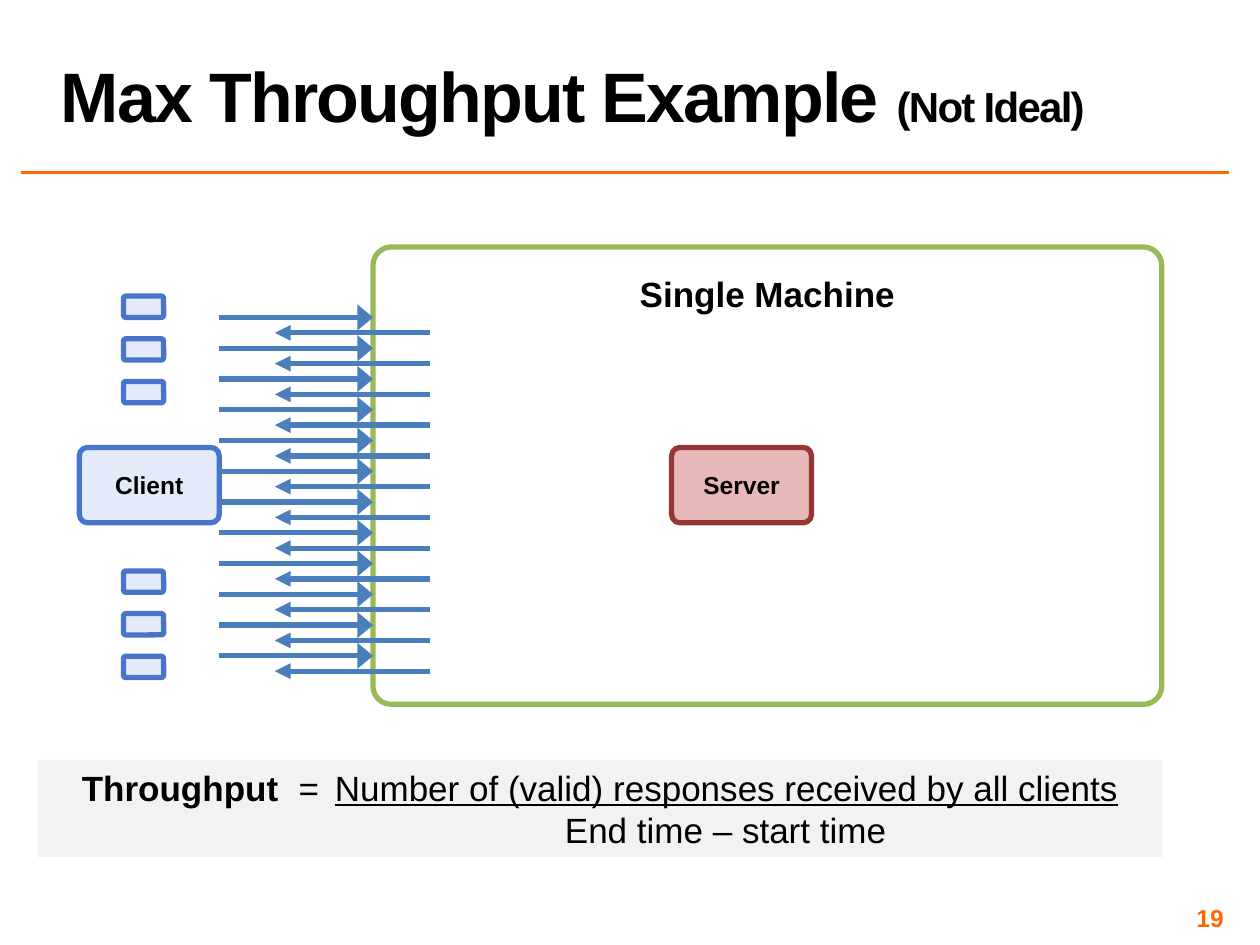
from dataclasses import dataclass
from typing import Any, Optional

import lxml.etree
import pptx
import pptx.dml.color
import pptx.enum.shapes
import pptx.enum.text
import pptx.oxml.ns
import pptx.util

Cm = pptx.util.Cm
Pt = pptx.util.Pt
RGBColor = pptx.dml.color.RGBColor
Align = pptx.enum.text.PP_ALIGN
Anchor = pptx.enum.text.MSO_ANCHOR
Preset = pptx.enum.shapes.MSO_SHAPE
qn = pptx.oxml.ns.qn

BLACK = RGBColor(0x00, 0x00, 0x00)
ORANGE = RGBColor(0xFF, 0x66, 0x00)
CLIENT_FILL = RGBColor(0xE3, 0xEA, 0xF9)
CLIENT_LINE = RGBColor(0x49, 0x74, 0xCB)
SERVER_FILL = RGBColor(0xE6, 0xB9, 0xB8)
SERVER_LINE = RGBColor(0x95, 0x37, 0x35)
MACHINE_LINE = RGBColor(0x98, 0xB9, 0x55)
ARROW_BLUE = RGBColor(0x4B, 0x7E, 0xBC)
FORMULA_FILL = RGBColor(0xF2, 0xF2, 0xF2)


@dataclass
class Box:
    left: float
    top: float
    width: float
    height: float
    fill: Optional[RGBColor] = None
    line: Optional[RGBColor] = None
    corner: Optional[float] = None
    text: str = ""
    size: int = 14


@dataclass
class ArrowStack:
    """Equally spaced horizontal arrows; end is the XML tag of the arrowhead."""
    left: float
    right: float
    top: float
    end: str
    head_width: str


ARROW_COUNT = 12
ARROW_STEP = 0.62
REQUESTS = ArrowStack(4.42, 7.52, 6.4, "a:tailEnd", "lg")
RESPONSES = ArrowStack(5.54, 8.66, 6.71, "a:headEnd", "med")

SMALL_CLIENT_TOPS = [start + 0.86 * row for start in (5.97, 11.51) for row in range(3)]
CLIENT_STYLE = {"fill": CLIENT_FILL, "line": CLIENT_LINE, "corner": 0.11}
CLIENT = Box(1.6, 9.02, 2.82, 1.52, text="Client", **CLIENT_STYLE)
SMALL_CLIENTS = [Box(2.49, top, 0.81, 0.43, **CLIENT_STYLE) for top in SMALL_CLIENT_TOPS]
MACHINE = Box(7.52, 4.98, 15.9, 9.22, line=MACHINE_LINE, corner=0.04,
              text="Single Machine", size=20)
SERVER = Box(13.54, 9.02, 2.82, 1.52, SERVER_FILL, SERVER_LINE, 0.11, "Server")
FORMULA = Box(0.76, 15.32, 22.68, 1.96, fill=FORMULA_FILL)


def apply(target: Any, values: dict) -> None:
    for name, value in values.items():
        setattr(target, name, value)


def add_span(para: Any, text: str, size: int, color: RGBColor = BLACK, **extra: Any) -> Any:
    span = para.add_run()
    span.text = text
    apply(span.font, {"name": "Arial", "size": Pt(size), **extra})
    span.font.color.rgb = color
    return span


def add_box(page: Any, box: Box) -> Any:
    preset = Preset.RECTANGLE if box.corner is None else Preset.ROUNDED_RECTANGLE
    shape = page.shapes.add_shape(preset, Cm(box.left), Cm(box.top),
                                  Cm(box.width), Cm(box.height))
    shape.shadow.inherit = False
    if box.corner is not None:
        shape.adjustments[0] = box.corner
    if box.fill is None:
        shape.fill.background()
    else:
        shape.fill.solid()
        shape.fill.fore_color.rgb = box.fill
    if box.line is None:
        shape.line.fill.background()
    else:
        shape.line.color.rgb = box.line
        shape.line.width = Pt(3)
    apply(shape.text_frame, {"word_wrap": True, "vertical_anchor": Anchor.MIDDLE})
    if box.text:
        para = shape.text_frame.paragraphs[0]
        para.alignment = Align.CENTER
        add_span(para, box.text, box.size, bold=True)
    return shape


def add_line(page: Any, left: float, right: float, top: float,
             color: RGBColor, width: float) -> Any:
    line = page.shapes.add_connector(pptx.enum.shapes.MSO_CONNECTOR.STRAIGHT,
                                     Cm(left), Cm(top), Cm(right), Cm(top))
    line.line.color.rgb = color
    line.line.width = Pt(width)
    lxml.etree.SubElement(line._element.spPr, qn("a:effectLst"))
    return line


def add_arrows(page: Any, stack: ArrowStack) -> None:
    for row in range(ARROW_COUNT):
        arrow = add_line(page, stack.left, stack.right, stack.top + row * ARROW_STEP,
                         ARROW_BLUE, 3)
        lxml.etree.SubElement(arrow.line._ln, qn(stack.end), type="triangle",
                              w=stack.head_width, len="med")


def add_title(page: Any) -> None:
    title = page.shapes.title
    apply(title, {"left": Cm(0.97), "top": Cm(0.05), "width": Cm(23.8), "height": Cm(2.82)})
    apply(title.text_frame, {"vertical_anchor": Anchor.BOTTOM, "word_wrap": True,
                             "auto_size": pptx.enum.text.MSO_AUTO_SIZE.NONE})
    para = title.text_frame.paragraphs[0]
    apply(para, {"alignment": Align.LEFT, "line_spacing": 0.8})
    for text, size in (("Max Throughput Example ", 40), ("(Not Ideal)", 24)):
        span = add_span(para, text, size, bold=True)
        span.font._element.set("spc", "-100")


def set_tabs(para: Any, stops: list[tuple[float, str]]) -> None:
    tabs = lxml.etree.SubElement(para._p.get_or_add_pPr(), qn("a:tabLst"))
    for position, kind in stops:
        lxml.etree.SubElement(tabs, qn("a:tab"), pos=str(int(Cm(position))), algn=kind)


def add_formula(page: Any) -> None:
    frame = add_box(page, FORMULA).text_frame
    apply(frame, {"vertical_anchor": Anchor.TOP, "margin_left": Cm(0.89), "margin_right": 0})
    numerator, denominator = frame.paragraphs[0], frame.add_paragraph()
    for para in (numerator, denominator):
        para.alignment = Align.LEFT
    set_tabs(numerator, [(4.37, "l"), (5.1, "l")])
    set_tabs(denominator, [(12.98, "ctr")])
    add_span(numerator, "Throughput", 20, bold=True)
    add_span(numerator, "\t=\t", 20)
    add_span(numerator, "Number of (valid) responses received by all clients", 20,
             underline=True)
    add_span(denominator, "\tEnd time – start time", 20)


def add_page_number(page: Any) -> None:
    frame = page.shapes.add_textbox(Cm(18.85), Cm(18.21), Cm(5.92), Cm(0.58)).text_frame
    margins = {f"margin_{side}": Cm(0.1) for side in ("left", "top", "right", "bottom")}
    apply(frame, {"word_wrap": True, "vertical_anchor": Anchor.MIDDLE, **margins})
    frame.paragraphs[0].alignment = Align.RIGHT
    add_span(frame.paragraphs[0], "19", 14, ORANGE, bold=True)


def main() -> None:
    deck = pptx.Presentation()
    apply(deck, {"slide_width": Cm(25.4), "slide_height": Cm(19.05)})
    page = deck.slides.add_slide(deck.slide_layouts.get_by_name("Title Only"))
    add_line(page, 0.43, 24.77, 3.48, ORANGE, 2)
    add_title(page)
    machine = add_box(page, MACHINE)
    apply(machine.text_frame, {"vertical_anchor": Anchor.TOP, "margin_top": Cm(0.4)})
    for box in (CLIENT, *SMALL_CLIENTS, SERVER):
        add_box(page, box)
    for stack in (REQUESTS, RESPONSES):
        add_arrows(page, stack)
    add_formula(page)
    add_page_number(page)
    deck.save("out.pptx")


if __name__ == "__main__":
    main()
